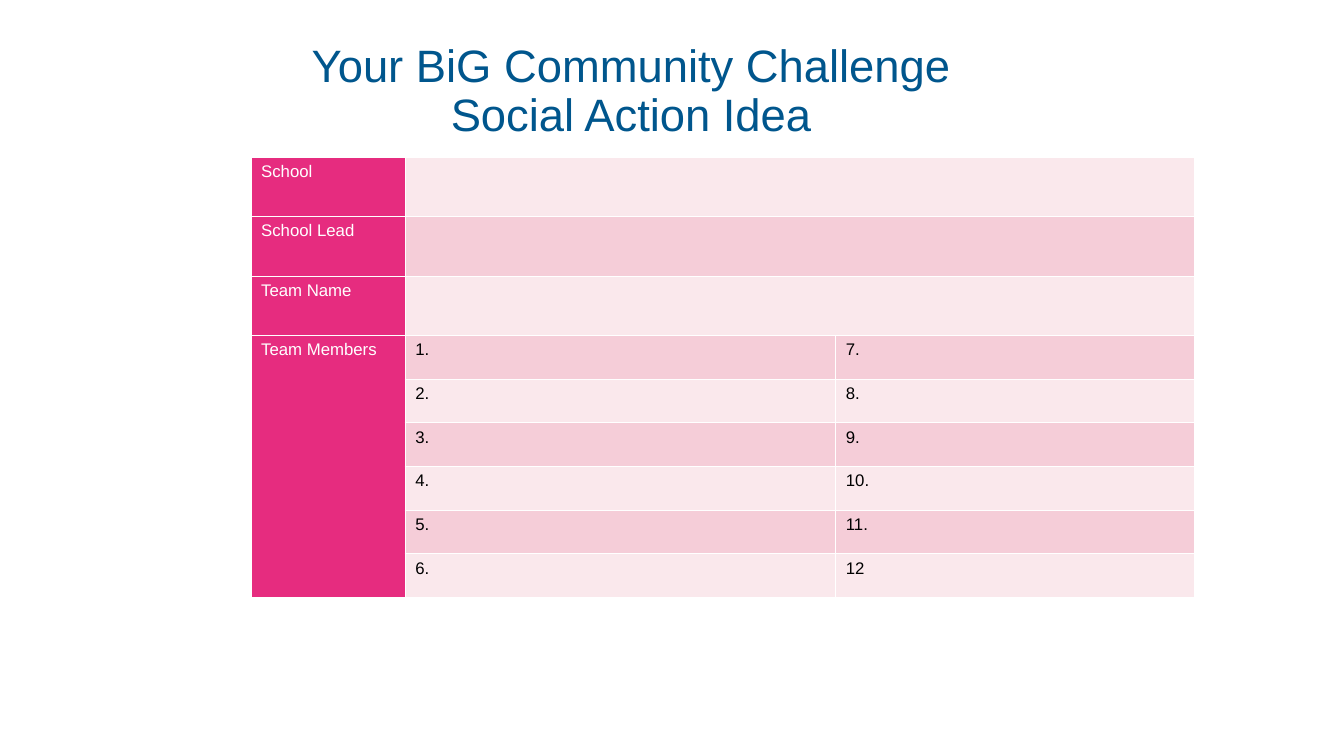
from pptx import Presentation
from pptx.dml.color import RGBColor
from pptx.enum import text
from pptx.util import Inches, Pt

TITLE = "Your BiG Community Challenge Social Action Idea"
DETAILS = ["School", "School Lead", "Team Name"]
MEMBERS_LABEL = "Team Members"
MEMBERS = [("1.", "7."), ("2.", "8."), ("3.", "9."),
           ("4.", "10."), ("5.", "11."), ("6.", "12")]

FONT = "Arial"
BLUE = RGBColor(0x00, 0x56, 0x8D)
PINK = RGBColor(0xE6, 0x2C, 0x7F)
BANDS = [RGBColor(0xFA, 0xE8, 0xEC), RGBColor(0xF5, 0xCD, 0xD8)]
WHITE = RGBColor(0xFF, 0xFF, 0xFF)
BLACK = RGBColor(0x00, 0x00, 0x00)

LEFT, TOP, HEIGHT = 2.49, 1.56, 4.37
COLUMN_WIDTHS = [1.53, 4.27, 3.56]
DETAIL_HEIGHT = 0.59
MEMBER_HEIGHT = (HEIGHT - DETAIL_HEIGHT * len(DETAILS)) / len(MEMBERS)


def style(paragraph, size, color):
    font = paragraph.font
    font.name, font.size, font.bold = FONT, Pt(size), False
    font.color.rgb = color


def add_title(slide):
    title = slide.shapes.add_textbox(
        Inches(2.73), Inches(0.4), Inches(7.06), Inches(1.03))
    frame = title.text_frame
    frame.word_wrap = True
    frame.vertical_anchor = text.MSO_ANCHOR.MIDDLE
    frame.text = TITLE
    heading = frame.paragraphs[0]
    heading.alignment = text.PP_ALIGN.CENTER
    heading.line_spacing = 0.9
    style(heading, 32.4, BLUE)


def add_form(slide):
    rows = [(label, "", "") for label in DETAILS]
    rows += [(MEMBERS_LABEL if i == 0 else "", *pair)
             for i, pair in enumerate(MEMBERS)]
    form = slide.shapes.add_table(
        len(rows), len(COLUMN_WIDTHS), Inches(LEFT), Inches(TOP),
        Inches(sum(COLUMN_WIDTHS)), Inches(HEIGHT)).table

    for column, width in zip(form.columns, COLUMN_WIDTHS):
        column.width = Inches(width)
    for r, row in enumerate(rows):
        is_detail = r < len(DETAILS)
        form.rows[r].height = Inches(DETAIL_HEIGHT if is_detail else MEMBER_HEIGHT)
        for c, words in enumerate(row):
            cell = form.cell(r, c)
            cell.text = words
            cell.fill.solid()
            cell.fill.fore_color.rgb = BANDS[r % 2] if c else PINK
            style(cell.text_frame.paragraphs[0], 12, BLACK if c else WHITE)
        if is_detail:
            form.cell(r, 1).merge(form.cell(r, 2))
    form.cell(len(DETAILS), 0).merge(form.cell(len(rows) - 1, 0))


def main():
    deck = Presentation()
    deck.slide_width, deck.slide_height = Inches(13.33), Inches(7.5)
    slide = deck.slides.add_slide(deck.slide_layouts[6])
    add_title(slide)
    add_form(slide)
    deck.save("out.pptx")


if __name__ == "__main__":
    main()
